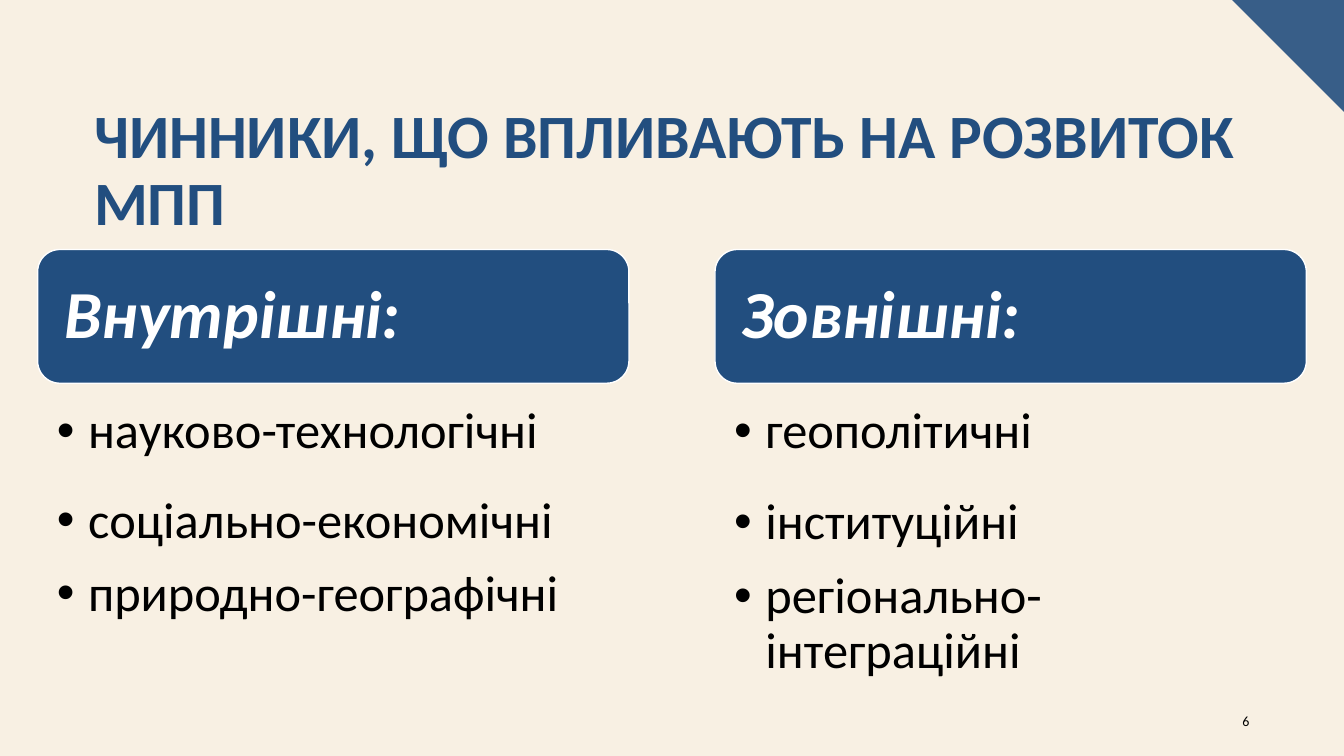
import pptx
import pptx.dml.color
import pptx.enum.shapes
import pptx.enum.text
import pptx.util
import lxml.etree
from dataclasses import dataclass
from typing import Any

Pt = pptx.util.Pt
Inch = pptx.util.Inches
Rgb = pptx.dml.color.RGBColor
Align = pptx.enum.text.PP_ALIGN
Anchor = pptx.enum.text.MSO_ANCHOR
Fit = pptx.enum.text.MSO_AUTO_SIZE

HUES = {"paper": "F8F0E3", "navy": "224E7F", "steel": "385E88",
        "white": "FFFFFF", "black": "000000"}
WIDE, HIGH = Inch(13.33), Inch(7.5)
COLS = ROWS = 100
STEP = 50.4


@dataclass
class Area:
    col: float
    row: float
    wide: float
    high: float


@dataclass
class Look:
    size: float
    hue: str
    bold: bool = False
    slant: bool = False


@dataclass
class Group:
    head: str
    items: list[str]
    gaps: list[float]
    high: float


GROUPS = [
    Group("Внутрішні:",
          ["науково-технологічні", "соціально-економічні", "природно-географічні"],
          [25, 13, 0], 34.4),
    Group("Зовнішні:",
          ["геополітичні", "інституційні", "регіонально-інтеграційні"],
          [26, 14, 0], 42.1),
]
TITLE = Look(44, "navy", bold=True)
HEAD = Look(48, "white", bold=True, slant=True)
ITEM = Look(36, "black")
NUMBER = Look(10, "black")


def tint(hue: str) -> Any:
    return Rgb.from_string(HUES[hue])


def across(col: float) -> int:
    return round(WIDE * col / COLS)


def down(row: float) -> int:
    return round(HIGH * row / ROWS)


def bounds(area: Area) -> tuple[int, int, int, int]:
    return across(area.col), down(area.row), across(area.wide), down(area.high)


def apply(item: Any, values: dict[str, Any]) -> None:
    for name, value in values.items():
        setattr(item, name, value)


def place(shape: Any, area: Area) -> None:
    apply(shape, dict(zip(("left", "top", "width", "height"), bounds(area))))


def pad(frame: Any, left: float, top: float, right: float, base: float) -> None:
    apply(frame, {"margin_left": Inch(left), "margin_top": Inch(top),
                  "margin_right": Inch(right), "margin_bottom": Inch(base),
                  "word_wrap": True, "auto_size": Fit.NONE})


def write(para: Any, text: str, look: Look, **form: Any) -> None:
    apply(para, {"alignment": Align.LEFT, "line_spacing": 0.9,
                 "space_before": Pt(0), "space_after": Pt(0)} | form)
    run = para.add_run()
    run.text = text
    apply(run.font, {"name": "Calibri", "size": Pt(look.size),
                     "bold": look.bold, "italic": look.slant})
    run.font.color.rgb = tint(look.hue)


def dot(para: Any) -> None:
    props = para._p.get_or_add_pPr()
    props.set("marL", str(Inch(0.31)))
    props.set("indent", str(Inch(-0.31)))
    mark = lxml.etree.SubElement(props, pptx.oxml.ns.qn("a:buChar"))
    mark.set("char", "•")


def corner(slide: Any) -> None:
    left, base = across(91.67), down(14.8)
    pen = slide.shapes.build_freeform(left, 0)
    pen.add_line_segments([(WIDE, 0), (WIDE, base)], close=True)
    shape = pen.convert_to_shape()
    shape.shadow.inherit = False
    shape.fill.solid()
    shape.fill.fore_color.rgb = tint("steel")
    shape.line.fill.background()


def banner(slide: Any, text: str, area: Area) -> None:
    kind = pptx.enum.shapes.MSO_SHAPE.ROUNDED_RECTANGLE
    shape = slide.shapes.add_shape(kind, *bounds(area))
    shape.shadow.inherit = False
    shape.fill.solid()
    shape.fill.fore_color.rgb = tint("navy")
    shape.line.color.rgb = tint("white")
    shape.line.width = Pt(1)
    frame = shape.text_frame
    pad(frame, 0.2, 0.2, 0.2, 0.2)
    frame.vertical_anchor = Anchor.MIDDLE
    write(frame.paragraphs[0], text, HEAD)


def listing(body: Any, group: Group, area: Area) -> None:
    place(body, area)
    frame = body.text_frame
    pad(frame, 0.19, 0.22, 0.28, 0.05)
    frame.vertical_anchor = Anchor.TOP
    for rank, (text, gap) in enumerate(zip(group.items, group.gaps)):
        para = frame.add_paragraph() if rank else frame.paragraphs[0]
        dot(para)
        write(para, text, ITEM, space_after=Pt(gap))


def main() -> None:
    deck = pptx.Presentation()
    apply(deck, {"slide_width": WIDE, "slide_height": HIGH})
    slide = deck.slides.add_slide(deck.slide_layouts[3])
    slide.background.fill.solid()
    slide.background.fill.fore_color.rgb = tint("paper")
    corner(slide)

    title = slide.shapes.title
    place(title, Area(6.25, 13.07, 87.5, 19.33))
    pad(title.text_frame, 0.1, 0.05, 0.1, 0.05)
    title.text_frame.vertical_anchor = Anchor.MIDDLE
    write(title.text_frame.paragraphs[0],
          "ЧИННИКИ, ЩО ВПЛИВАЮТЬ НА РОЗВИТОК МПП", TITLE)

    for rank, group in enumerate(GROUPS):
        col = 2.8 + rank * STEP
        banner(slide, group.head, Area(col, 33, 44, 17.7))
        listing(slide.placeholders[rank + 1], group,
                Area(col, 50.7, 44, group.high))

    number = slide.shapes.add_textbox(*bounds(Area(89.95, 92.67, 3.75, 5.33)))
    pad(number.text_frame, 0.1, 0.05, 0.1, 0.05)
    number.text_frame.vertical_anchor = Anchor.MIDDLE
    write(number.text_frame.paragraphs[0], "6", NUMBER,
          alignment=Align.RIGHT, line_spacing=1.0, space_after=Pt(6))
    deck.save("out.pptx")


if __name__ == "__main__":
    main()
